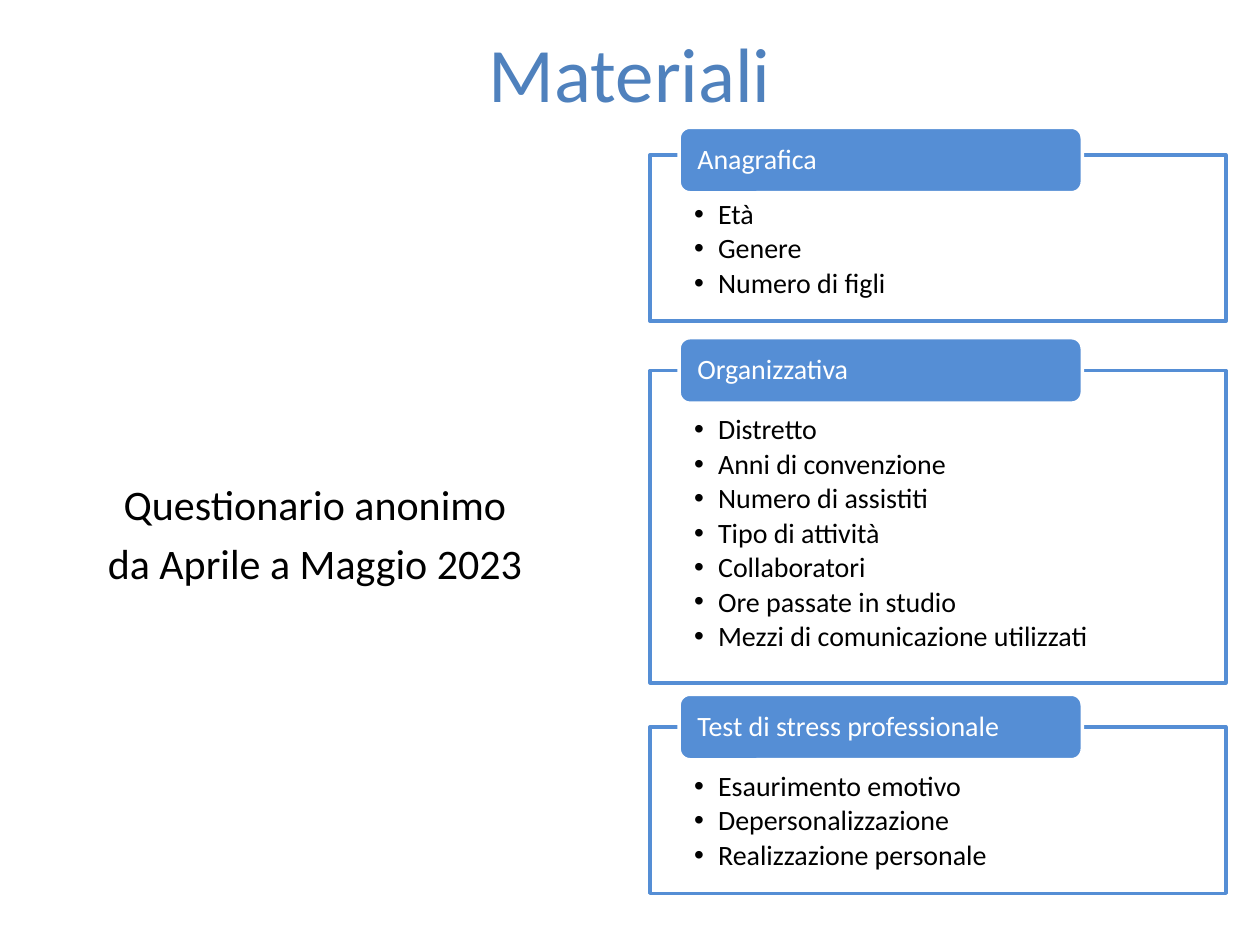
from lxml.etree import SubElement
from pptx import Presentation
from pptx.dml.color import RGBColor
from pptx.enum.shapes import MSO_SHAPE
from pptx.enum.text import MSO_ANCHOR, PP_ALIGN
from pptx.oxml.ns import qn
from pptx.util import Inches, Pt

TITLE = "Materiali"
SUBTITLE = ["Questionario anonimo", "da Aprile a Maggio 2023"]
SECTIONS = [
    {"heading": "Anagrafica", "tab_top": 1.01, "top": 1.23, "height": 1.32,
     "items": ["Età", "Genere", "Numero di figli"]},
    {"heading": "Organizzativa", "tab_top": 2.68, "top": 2.94, "height": 2.48,
     "items": ["Distretto", "Anni di convenzione", "Numero di assistiti",
               "Tipo di attività", "Collaboratori", "Ore passate in studio",
               "Mezzi di comunicazione utilizzati"]},
    {"heading": "Test di stress professionale", "tab_top": 5.51, "top": 5.77,
     "height": 1.32,
     "items": ["Esaurimento emotivo", "Depersonalizzazione",
               "Realizzazione personale"]},
]

FONT = "Calibri"
TITLE_BLUE = RGBColor(0x4F, 0x81, 0xBD)
BLUE = RGBColor(0x55, 0x8E, 0xD5)
WHITE = RGBColor(0xFF, 0xFF, 0xFF)
BLACK = RGBColor(0, 0, 0)
BOX_LEFT, BOX_WIDTH = 5.16, 4.57
TAB_LEFT, TAB_WIDTH, TAB_HEIGHT = 5.39, 3.2, 0.52
BULLET_INDENT = 0.19


def write(holder, lines, size, color, align=PP_ALIGN.LEFT, anchor=MSO_ANCHOR.TOP,
          insets=(0.1, 0.05, 0.1, 0.05), before=0, after=0, spacing=1.0, bullet=None):
    frame = holder.text_frame
    frame.word_wrap = True
    frame.vertical_anchor = anchor
    (frame.margin_left, frame.margin_top,
     frame.margin_right, frame.margin_bottom) = map(Inches, insets)
    for index, line in enumerate(lines):
        paragraph = frame.add_paragraph() if index else frame.paragraphs[0]
        paragraph.alignment = align
        paragraph.line_spacing = spacing
        paragraph.space_before = Pt(before)
        paragraph.space_after = Pt(after)
        run = paragraph.add_run()
        run.text = line
        run.font.name = FONT
        run.font.size = Pt(size)
        run.font.color.rgb = color
        if bullet:
            paragraph.level = 1
            properties = paragraph._p.get_or_add_pPr()
            properties.set("marL", str(Inches(BULLET_INDENT)))
            properties.set("indent", str(-Inches(BULLET_INDENT)))
            SubElement(properties, qn("a:buFont"), typeface="Arial")
            SubElement(properties, qn("a:buChar"), char=bullet)


def add_panel(slide, preset, bounds, fill, line):
    panel = slide.shapes.add_shape(preset, *map(Inches, bounds))
    panel.shadow.inherit = False
    panel.fill.solid()
    panel.fill.fore_color.rgb = fill
    panel.line.color.rgb = line
    panel.line.width = Pt(2)
    return panel


def add_section(slide, section):
    box = add_panel(slide, MSO_SHAPE.RECTANGLE,
                    (BOX_LEFT, section["top"], BOX_WIDTH, section["height"]),
                    WHITE, BLUE)
    box_color = box.fill._xPr.find(qn("a:solidFill"))[0]
    SubElement(box_color, qn("a:alpha"), val="90000")
    write(box, section["items"], 16, BLACK, insets=(0.35, 0.36, 0.35, 0.12),
          after=2.4, spacing=0.9, bullet="•")
    tab = add_panel(slide, MSO_SHAPE.ROUNDED_RECTANGLE,
                    (TAB_LEFT, section["tab_top"], TAB_WIDTH, TAB_HEIGHT),
                    BLUE, WHITE)
    write(tab, [section["heading"]], 16, WHITE, anchor=MSO_ANCHOR.MIDDLE,
          insets=(0.12, 0, 0.12, 0), spacing=0.9)


def main():
    presentation = Presentation()
    presentation.slide_width = Inches(10)
    presentation.slide_height = Inches(7.5)
    slide = presentation.slides.add_slide(presentation.slide_layouts[6])

    title = slide.shapes.add_textbox(*map(Inches, (0.75, 0, 8.5, 1.14)))
    write(title, [TITLE], 44, TITLE_BLUE, align=PP_ALIGN.CENTER,
          anchor=MSO_ANCHOR.MIDDLE)
    subtitle = slide.shapes.add_textbox(*map(Inches, (0, 3.75, 5, 0.79)))
    write(subtitle, SUBTITLE, 24, BLACK, align=PP_ALIGN.CENTER, before=4.8)

    for section in SECTIONS:
        add_section(slide, section)
    presentation.save("out.pptx")


if __name__ == "__main__":
    main()
